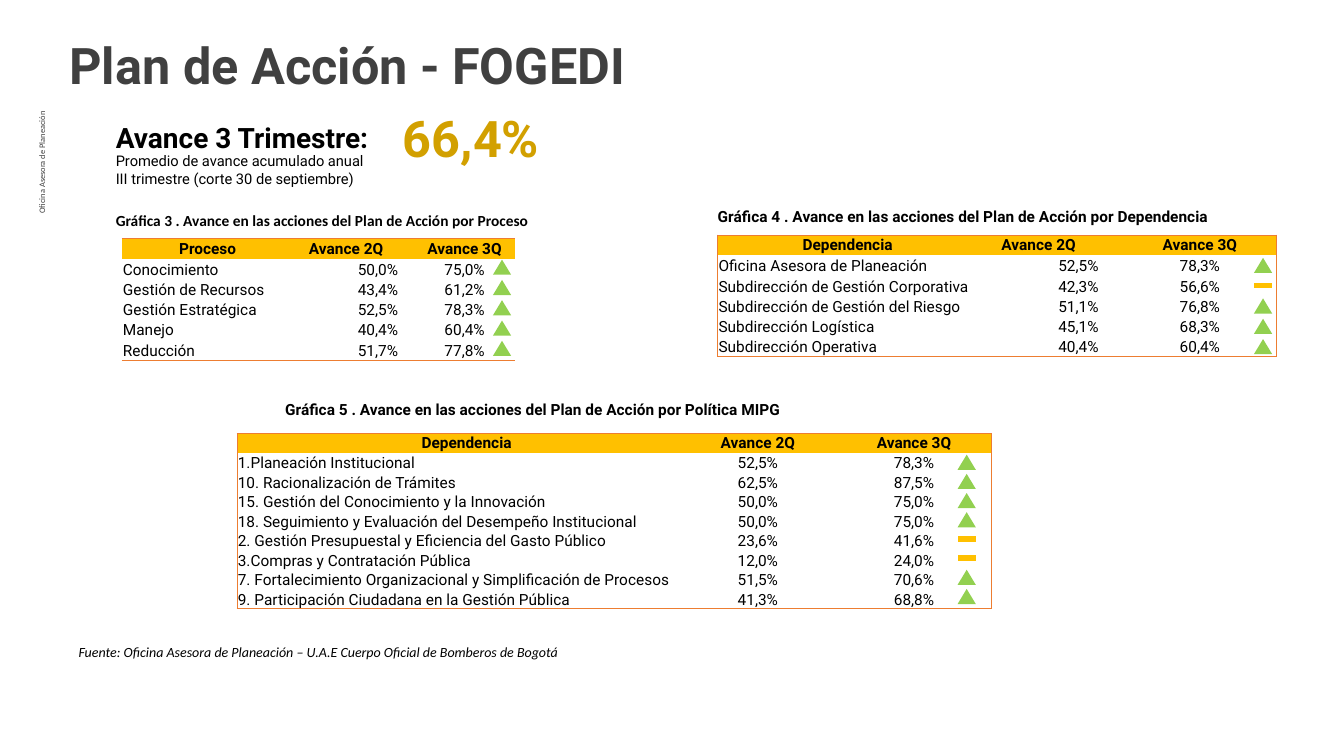
from lxml import etree
from pptx import Presentation
from pptx.dml.color import RGBColor
from pptx.enum.shapes import MSO_SHAPE
from pptx.enum.text import MSO_ANCHOR, MSO_AUTO_SIZE, PP_ALIGN
from pptx.oxml.ns import qn
from pptx.util import Pt

LEFT, CENTER, RIGHT = PP_ALIGN.LEFT, PP_ALIGN.CENTER, PP_ALIGN.RIGHT
MIDDLE, BOTTOM = MSO_ANCHOR.MIDDLE, MSO_ANCHOR.BOTTOM
GROW = MSO_AUTO_SIZE.SHAPE_TO_FIT_TEXT
NO_TABLE_STYLE = "{2D5ABB26-0587-4C30-8999-92F81FD0307C}"
BLACK, GRAY, GOLD = "000000", "404040", "D2A000"
AMBER, ORANGE, GREEN = "FFC000", "ED7D31", "92D050"
TABLE_TEXT_SIZE = 11
CELL_MARGINS = {"margin_left": 0.7, "margin_right": 0.7, "margin_top": 0.7, "margin_bottom": 0}
MARK_WIDTH = 13
MARKS = {  # shape, height, colour
    "up": (MSO_SHAPE.ISOSCELES_TRIANGLE, 10.8, GREEN),
    "flat": (MSO_SHAPE.FLOWCHART_PROCESS, 3.9, AMBER),
}

# lines, (left, top, width, height), font name, size, colour, other formats
TEXTS = [
    (["Plan de Acción - FOGEDI"], (42.5, 20.9, 767.5, 51.1), "Roboto", 36, GRAY, {"bold": True}),
    (["Fuente: Oficina Asesora de Planeación – U.A.E Cuerpo Oficial de Bomberos de Bogotá"],
     (49, 455.8, 480, 19.4), "Calibri", 10, BLACK, {"italic": True}),
    (["Avance 3 Trimestre:"], (75.6, 82.8, 217.4, 31.7), "Roboto", 20, BLACK, {"bold": True}),
    (["66,4%"], (280.8, 72.7, 139, 51.1), "Roboto", 36, GOLD, {"bold": True}),
    (["Promedio de avance acumulado anual", "III trimestre (corte 30 de septiembre)"],
     (75.6, 105.1, 203, 32.4), "Roboto", 10.5, BLACK, {}),
    (["Gráfica 3 . Avance en las acciones del Plan de Acción por Proceso"],
     (75.6, 147.6, 356.4, 20.9), "Calibri", 11, BLACK, {"bold": True}),
    (["Gráfica 4 . Avance en las acciones del Plan de Acción por Dependencia"],
     (505.6, 144.7, 402.5, 20.9), "Roboto", 11, BLACK, {"bold": True}),
    (["Gráfica 5 . Avance en las acciones del Plan de Acción por Política MIPG"],
     (196.6, 282.2, 402.5, 20.9), "Roboto", 11, BLACK, {"bold": True}),
]
SIDE_LABEL = (["Oficina Asesora de Planeación"], (-63.4, 161.3, 186.5, 13), "Calibri", 6, GRAY, {})

TABLES = [
    {
        "place": (87.1, 170.6), "widths": (122.4, 75.6, 10.8, 72), "row_height": 14.5,
        "second_align": RIGHT, "anchor": MIDDLE, "boxed": False, "border": 1,
        "mark_left": 352.1, "mark_shift": -1.5,
        "rows": [
            ("Proceso", "Avance 2Q", "Avance 3Q", None),
            ("Conocimiento", "50,0%", "75,0%", "up"),
            ("Gestión de Recursos", "43,4%", "61,2%", "up"),
            ("Gestión Estratégica", "52,5%", "78,3%", "up"),
            ("Manejo", "40,4%", "60,4%", "up"),
            ("Reducción", "51,7%", "77,8%", "up"),
        ],
    },
    {
        "place": (512.6, 167.8), "widths": (185.8, 87.1, 17.3, 108.7), "row_height": 14.5,
        "second_align": RIGHT, "anchor": BOTTOM, "boxed": True, "border": 0.5,
        "mark_left": 895.7, "mark_shift": 0,
        "rows": [
            ("Dependencia", "Avance 2Q", "Avance 3Q", None),
            ("Oficina Asesora de Planeación", "52,5%", "78,3%", "up"),
            ("Subdirección de Gestión Corporativa", "42,3%", "56,6%", "flat"),
            ("Subdirección de Gestión del Riesgo", "51,1%", "76,8%", "up"),
            ("Subdirección Logística", "45,1%", "68,3%", "up"),
            ("Subdirección Operativa", "40,4%", "60,4%", "up"),
        ],
    },
    {
        "place": (169.2, 309.6), "widths": (328.3, 87.8, 12.2, 110.9), "row_height": 13.7,
        "second_align": CENTER, "anchor": BOTTOM, "boxed": True, "border": 0.5,
        "mark_left": 684, "mark_shift": 0,
        "rows": [
            ("Dependencia", "Avance 2Q", "Avance 3Q", None),
            ("1.Planeación Institucional", "52,5%", "78,3%", "up"),
            ("10. Racionalización de Trámites", "62,5%", "87,5%", "up"),
            ("15. Gestión del Conocimiento y la Innovación", "50,0%", "75,0%", "up"),
            ("18. Seguimiento y Evaluación del Desempeño Institucional", "50,0%", "75,0%", "up"),
            ("2. Gestión Presupuestal y Eficiencia del Gasto Público", "23,6%", "41,6%", "flat"),
            ("3.Compras y Contratación Pública", "12,0%", "24,0%", "flat"),
            ("7. Fortalecimiento Organizacional y Simplificación de Procesos", "51,5%", "70,6%", "up"),
            ("9. Participación Ciudadana en la Gestión Pública", "41,3%", "68,8%", "up"),
        ],
    },
]


def rgb(value):
    return RGBColor.from_string(value)


def write(paragraph, text, font_name, size, color, formats):
    run = paragraph.add_run()
    run.text = text
    run.font.color.rgb = rgb(color)
    for name, value in {"name": font_name, "size": Pt(size), **formats}.items():
        setattr(run.font, name, value)


def add_text(slide, lines, box, font_name, size, color, formats):
    shape = slide.shapes.add_textbox(*map(Pt, box))
    frame = shape.text_frame
    frame.word_wrap = True
    frame.auto_size = GROW
    for index, line in enumerate(lines):
        paragraph = frame.add_paragraph() if index else frame.paragraphs[0]
        write(paragraph, line, font_name, size, color, formats)
    return shape


def add_border(cell, side, width):
    """Draw one side (L, R, T or B); call in that order and before the fill is set."""
    line = etree.SubElement(cell._tc.get_or_add_tcPr(), qn(f"a:ln{side}"), w=str(Pt(width)))
    fill = etree.SubElement(line, qn("a:solidFill"))
    etree.SubElement(fill, qn("a:srgbClr"), val=ORANGE)


def format_cell(cell, text, align, is_header, anchor, sides, border):
    for name, value in CELL_MARGINS.items():
        setattr(cell, name, Pt(value))
    cell.vertical_anchor = MIDDLE if is_header else anchor
    for side in sides:
        add_border(cell, side, border)
    if is_header:
        cell.fill.solid()
        cell.fill.fore_color.rgb = rgb(AMBER)
    else:
        cell.fill.background()
    paragraph = cell.text_frame.paragraphs[0]
    paragraph.alignment = align
    if text:
        write(paragraph, text, "Roboto", TABLE_TEXT_SIZE, BLACK, {"bold": is_header})
    else:
        etree.SubElement(paragraph._p, qn("a:endParaRPr"), sz=str(TABLE_TEXT_SIZE * 100))


def add_mark(slide, kind, left, middle):
    preset, height, color = MARKS[kind]
    shape = slide.shapes.add_shape(
        preset, Pt(left), Pt(middle - height / 2), Pt(MARK_WIDTH), Pt(height))
    shape.shadow.inherit = False
    shape.fill.solid()
    shape.fill.fore_color.rgb = rgb(color)
    shape.line.fill.background()


def add_progress_table(slide, data):
    rows, widths, row_height = data["rows"], data["widths"], data["row_height"]
    left, top = data["place"]
    last_row, last_column = len(rows) - 1, len(widths) - 1
    frame = slide.shapes.add_table(len(rows), len(widths), Pt(left), Pt(top),
                                   Pt(sum(widths)), Pt(row_height * len(rows)))
    table = frame.table
    table.first_row = table.horz_banding = False
    table._tbl.tblPr.find(qn("a:tableStyleId")).text = NO_TABLE_STYLE
    for column, width in zip(table.columns, widths):
        column.width = Pt(width)
    for r, (label, second, third, mark) in enumerate(rows):
        table.rows[r].height = Pt(row_height)
        aligns = (LEFT, data["second_align"], CENTER, CENTER) if r else (CENTER,) * 4
        for c, text in enumerate((label, second, "", third)):
            edges = {"L": data["boxed"] and c == 0, "R": data["boxed"] and c == last_column,
                     "T": r == 0, "B": r == last_row}
            sides = [side for side, drawn in edges.items() if drawn]
            format_cell(table.cell(r, c), text, aligns[c], r == 0,
                        data["anchor"], sides, data["border"])
        if mark:
            middle = top + (r + 0.5) * row_height + data["mark_shift"]
            add_mark(slide, mark, data["mark_left"], middle)


def main():
    presentation = Presentation()
    presentation.slide_width, presentation.slide_height = Pt(960), Pt(540)
    slide = presentation.slides.add_slide(presentation.slide_layouts[6])
    for text in TEXTS:
        add_text(slide, *text)
    side_label = add_text(slide, *SIDE_LABEL)
    side_label.rotation = 270
    side_label.text_frame.margin_left = side_label.text_frame.margin_right = Pt(5)
    side_label.text_frame.margin_top = side_label.text_frame.margin_bottom = Pt(2.9)
    side_label.text_frame.paragraphs[0].alignment = RIGHT
    for data in TABLES:
        add_progress_table(slide, data)
    presentation.save("out.pptx")


if __name__ == "__main__":
    main()
